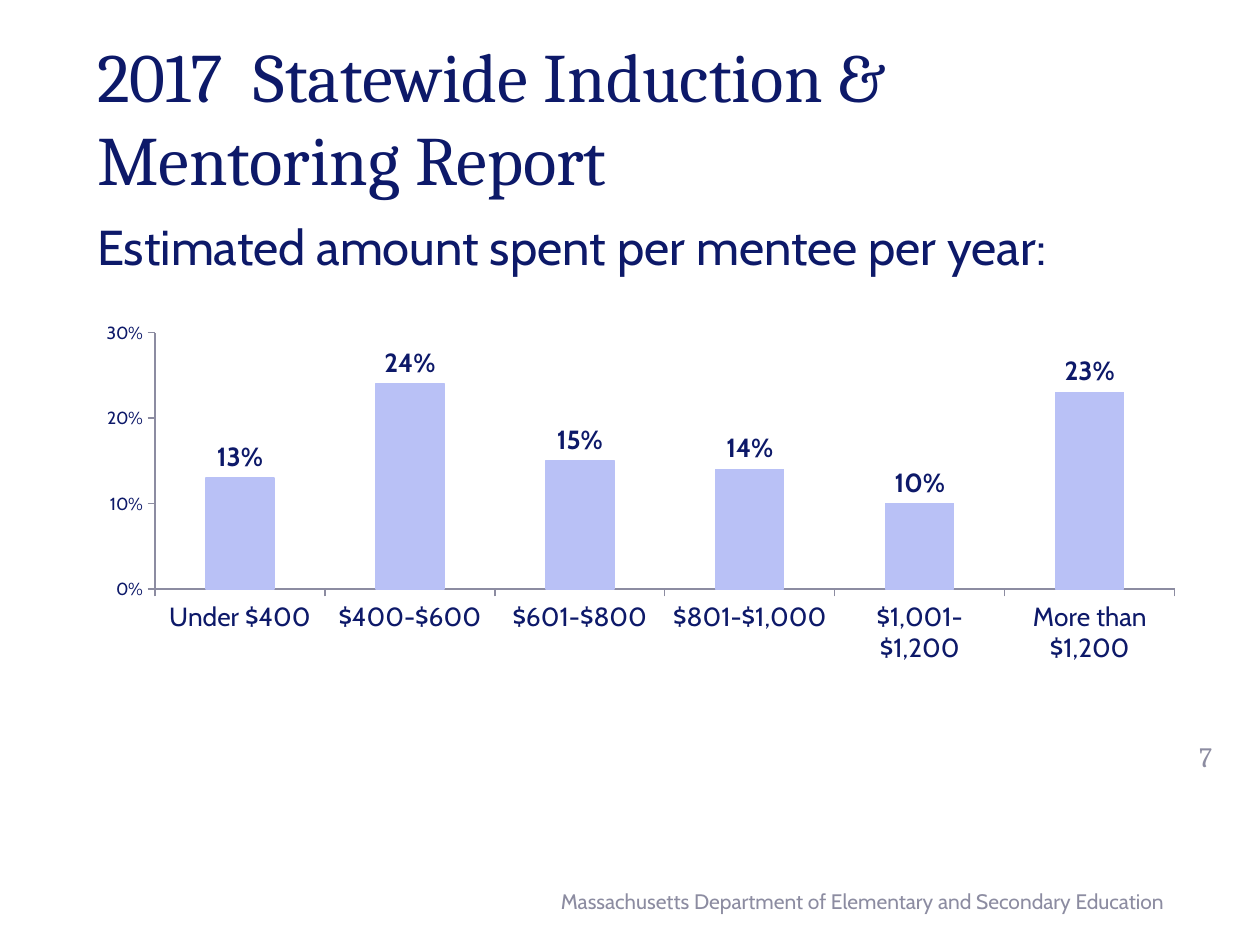
from dataclasses import dataclass

import pptx
import pptx.chart.data
import pptx.dml.color
import pptx.enum.chart
import pptx.enum.text
import pptx.oxml
import pptx.util
from pptx.util import Inches

NAVY = pptx.dml.color.RGBColor(0x0D, 0x19, 0x69)
GREY = pptx.dml.color.RGBColor(0x8C, 0x8C, 0xA1)
LAVENDER = pptx.dml.color.RGBColor(0xB9, 0xC1, 0xF6)
HEADING_FONT = "Cambria"
BODY_FONT = "Cabin"
ALIGN = pptx.enum.text.PP_ALIGN
ANCHOR = pptx.enum.text.MSO_ANCHOR


@dataclass
class TextItem:
    text: str
    box: tuple[float, float, float, float]
    font: str
    size: float
    color: pptx.dml.color.RGBColor
    align: ALIGN
    anchor: ANCHOR


TITLE = TextItem("2017  Statewide Induction & Mentoring Report", (0.67, 0.3, 8.67, 1.25),
                 HEADING_FONT, 39.6, NAVY, ALIGN.LEFT, ANCHOR.MIDDLE)
SUBTITLE = TextItem("Estimated amount spent per mentee per year:", (0.67, 1.67, 8.67, 1),
                    BODY_FONT, 28, NAVY, ALIGN.LEFT, ANCHOR.TOP)
FOOTERS = [
    TextItem("Massachusetts Department of Elementary and Secondary Education",
             (3.42, 6.95, 5.92, 0.4), BODY_FONT, 12, GREY, ALIGN.RIGHT, ANCHOR.MIDDLE),
    TextItem("7", (9.28, 5.75, 0.58, 0.5), HEADING_FONT, 16, GREY, ALIGN.CENTER, ANCHOR.MIDDLE),
]
SPENDING = {
    "Under $400": 0.13,
    "$400-$600": 0.24,
    "$601-$800": 0.15,
    "$801-$1,000": 0.14,
    "$1,001-$1,200": 0.1,
    "More than $1,200": 0.23,
}


def style_font(font, size: float, color=NAVY, name: str = BODY_FONT, bold: bool = False) -> None:
    font.name = name
    font.size = pptx.util.Pt(size)
    font.bold = bold
    font.color.rgb = color


def fill_text(sp, item: TextItem):
    """Place a text shape, write its one run and return the paragraph."""
    sp.left, sp.top, sp.width, sp.height = map(Inches, item.box)
    tf = sp.text_frame
    tf.word_wrap = True
    tf.auto_size = pptx.enum.text.MSO_AUTO_SIZE.NONE
    tf.vertical_anchor = item.anchor
    p = tf.paragraphs[0]
    p.alignment = item.align
    p.space_before = pptx.util.Pt(0)
    r = p.add_run()
    r.text = item.text
    style_font(r.font, item.size, item.color, item.font)
    return p


def add_spending_chart(slide) -> None:
    data = pptx.chart.data.CategoryChartData(number_format="0%")
    data.categories = list(SPENDING)
    data.add_series("Series 1", list(SPENDING.values()))
    chart = slide.shapes.add_chart(
        pptx.enum.chart.XL_CHART_TYPE.COLUMN_CLUSTERED,
        *map(Inches, (0.67, 2.5, 8.83, 2.83)), data).chart
    chart.has_legend = False
    chart.has_title = False
    style_font(chart.font, 10)

    # Axes
    for axis, size in ((chart.category_axis, 15), (chart.value_axis, 10)):
        axis.has_major_gridlines = False
        axis.major_tick_mark = pptx.enum.chart.XL_TICK_MARK.OUTSIDE
        axis.format.line.color.rgb = GREY
        axis.format.line.width = pptx.util.Pt(0.75)
        style_font(axis.tick_labels.font, size)
    values = chart.value_axis
    values.minimum_scale, values.maximum_scale, values.major_unit = 0, 0.3, 0.1
    values.tick_labels.number_format = "0%"
    values.tick_labels.number_format_is_linked = False

    # Columns and their labels
    plot = chart.plots[0]
    plot.gap_width = 150
    plot.vary_by_categories = False
    series = plot.series[0]
    series.format.fill.solid()
    series.format.fill.fore_color.rgb = LAVENDER
    series.format.line.color.rgb = LAVENDER
    series.format.line.width = pptx.util.Pt(0.75)
    labels = series.data_labels
    labels.show_value = True
    labels.position = pptx.enum.chart.XL_LABEL_POSITION.OUTSIDE_END
    labels.number_format = "0%"
    labels.number_format_is_linked = False
    style_font(labels.font, 15, bold=True)


def main() -> None:
    prs = pptx.Presentation()
    prs.slide_width, prs.slide_height = Inches(10), Inches(7.5)
    slide = prs.slides.add_slide(prs.slide_layouts[1])

    # Title and subtitle
    fill_text(slide.shapes.title, TITLE)
    p = fill_text(slide.placeholders[1], SUBTITLE)
    pPr = p._p.get_or_add_pPr()
    pPr.set("marL", str(Inches(0.38)))
    pPr.set("indent", str(-Inches(0.38)))
    pPr.append(pptx.oxml.parse_xml(
        '<a:buNone xmlns:a="http://schemas.openxmlformats.org/drawingml/2006/main"/>'))

    add_spending_chart(slide)

    # Footer and page number
    for item in FOOTERS:
        fill_text(slide.shapes.add_textbox(*map(Inches, item.box)), item)

    prs.save("out.pptx")


if __name__ == "__main__":
    main()
